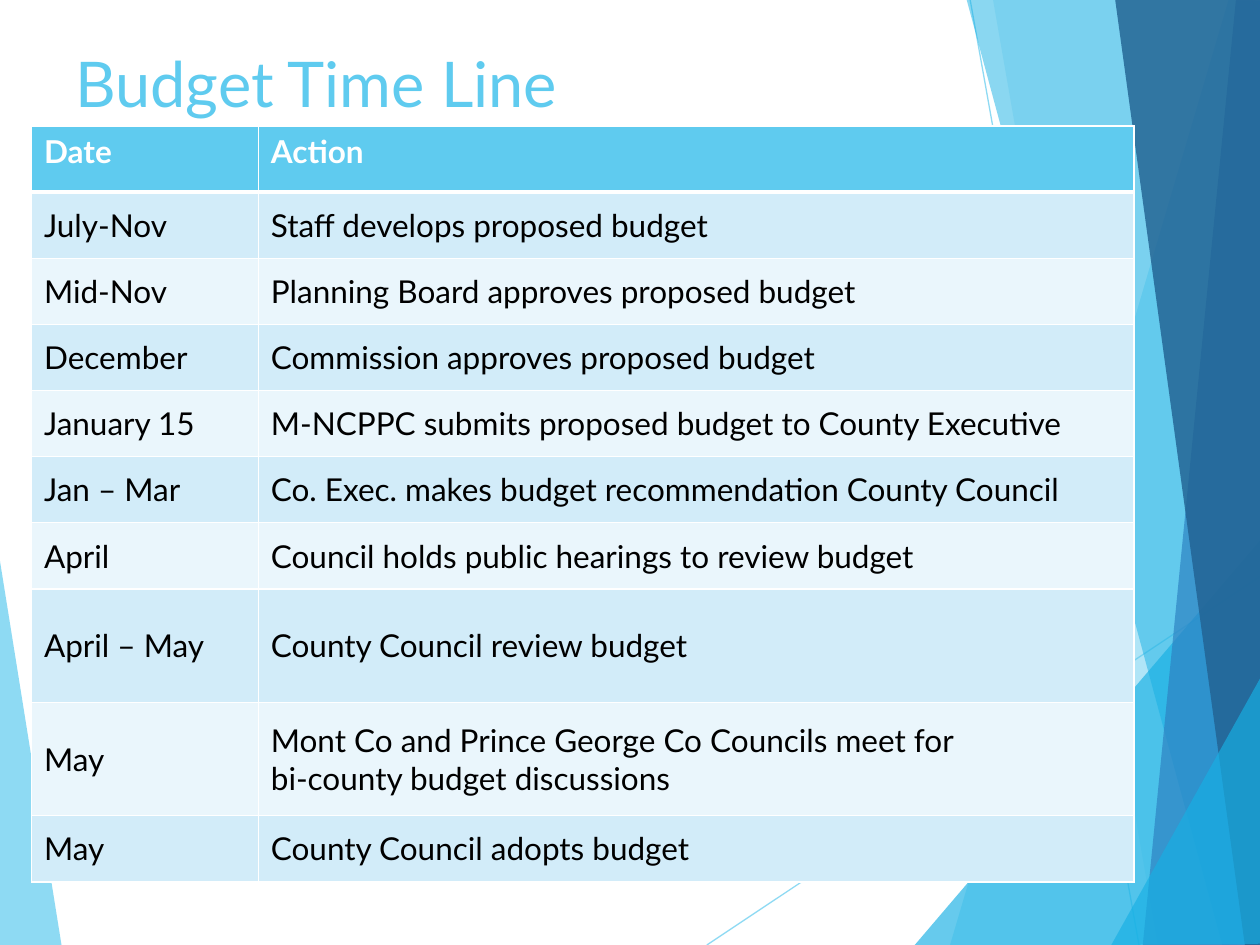
from lxml import etree
from pptx import Presentation
from pptx.dml.color import RGBColor
from pptx.enum.shapes import MSO_CONNECTOR
from pptx.enum.text import MSO_ANCHOR
from pptx.oxml.ns import qn
from pptx.util import Inches, Pt

STRAIGHT = MSO_CONNECTOR.STRAIGHT
TOP, MIDDLE = MSO_ANCHOR.TOP, MSO_ANCHOR.MIDDLE
FONT = "Lato"
COLORS = {
    "sky": "5FCBEF", "cyan": "17B0E4", "blue": "2E83C3", "navy": "226292",
    "band_dark": "D2ECF9", "band_light": "EAF6FC", "white": "FFFFFF", "black": "000000",
}
LINES = [((5.61, 7.5), (10.01, 4.57)), ((7.7, 0), (9.04, 7.5))]
LEFT_FACET = ("sky", 70, [(-0.01, 4.39), (0.49, 7.51), (-0.01, 7.5)])
RIGHT_FACETS = [
    ("sky", 36, [(9.75, 0), (7.54, 7.5), (10.02, 7.51), (10.01, 0.01)]),
    ("sky", 20, [(7.88, -0.01), (9.19, 7.5), (10.01, 7.5), (10.01, -0.01)]),
    ("cyan", 66, [(7.26, 7.5), (10, 4.29), (10.01, 7.5)]),
    ("cyan", 50, [(7.67, -0.01), (9.7, 7.5), (10.01, 7.49), (10.01, -0.01)]),
    ("blue", 70, [(9.81, -0.01), (9.07, 7.5), (10.01, 7.5), (10, -0.01)]),
    ("navy", 82, [(8.85, -0.01), (9.88, 7.5), (10.02, 7.5), (10, -0.01)]),
    ("cyan", 66, [(8.82, 7.5), (10.02, 5.35), (10.02, 7.49)]),
]
TIMELINE = [
    ("Date", "Action"),
    ("July-Nov", "Staff develops proposed budget"),
    ("Mid-Nov", "Planning Board approves proposed budget"),
    ("December", "Commission approves proposed budget"),
    ("January 15", "M-NCPPC submits proposed budget to County Executive"),
    ("Jan – Mar", "Co. Exec. makes budget recommendation County Council"),
    ("April", "Council holds public hearings to review budget"),
    ("April – May", "County Council review budget"),
    ("May", "Mont Co and Prince George Co Councils meet for\vbi-county budget discussions"),
    ("May", "County Council adopts budget"),
]
TALL_ROWS = (7, 8)
TALL_HEIGHT = 0.9
DATE_WIDTH = 1.8


def rgb(name):
    """Return the named colour."""
    return RGBColor.from_string(COLORS[name])


def set_text(frame, text, size=18, color="black", bold=False):
    """Write formatted text into a text frame."""
    frame.text = text
    for run in frame.paragraphs[0].runs:
        run.font.name = FONT
        run.font.size = Pt(size)
        run.font.bold = bold
        run.font.color.rgb = rgb(color)


def set_opacity(fill_owner, percent):
    """Give every solid colour below an element an opacity."""
    for color in fill_owner.iter(qn("a:srgbClr")):
        etree.SubElement(color, qn("a:alpha"), val=str(percent * 1000))


def add_facet(slide, box, color, opacity, points):
    """Draw one translucent polygon, offset by the box."""
    corners = [(Inches(box[0] + x), Inches(box[1] + y)) for x, y in points]
    builder = slide.shapes.build_freeform(*corners[0])
    builder.add_line_segments(corners[1:], close=True)
    shape = builder.convert_to_shape()
    shape.shadow.inherit = False
    shape.fill.solid()
    shape.fill.fore_color.rgb = rgb(color)
    shape.line.fill.background()
    set_opacity(shape._element.spPr, opacity)


def add_thin_line(slide, box, start, end):
    """Draw one translucent thin line, offset by the box."""
    ends = [Inches(box[i] + point[i]) for point in (start, end) for i in (0, 1)]
    connector = slide.shapes.add_connector(STRAIGHT, *ends)
    connector.line.color.rgb = rgb("sky")
    connector.line.width = Pt(0.75)
    properties = connector._element.spPr
    set_opacity(properties, 70)
    etree.SubElement(properties, qn("a:effectLst"))


def add_backdrop(slide, box):
    """Place the facets and thin lines behind the content."""
    add_facet(slide, box, *LEFT_FACET)
    for start, end in LINES:
        add_thin_line(slide, box, start, end)
    for facet in RIGHT_FACETS:
        add_facet(slide, box, *facet)


def add_title(slide, box, text):
    """Place the slide title in the box."""
    shape = slide.shapes.add_textbox(*map(Inches, box))
    shape.text_frame.word_wrap = True
    shape.text_frame.vertical_anchor = TOP
    set_text(shape.text_frame, text, size=36, color="sky")


def set_borders(cell, **widths):
    """Draw white borders of the given point widths around a cell."""
    properties = cell._tc.get_or_add_tcPr()
    for side in "LRTB":
        width = str(Pt(widths.get(side, 1)))
        border = etree.SubElement(properties, qn(f"a:ln{side}"), w=width)
        fill = etree.SubElement(border, qn("a:solidFill"))
        etree.SubElement(fill, qn("a:srgbClr"), val=COLORS["white"])


def add_timeline(slide, box, rows):
    """Place the table of dates and actions in the box."""
    table = slide.shapes.add_table(len(rows), 2, *map(Inches, box)).table
    table.columns[0].width = Inches(DATE_WIDTH)
    table.columns[1].width = Inches(box[2] - DATE_WIDTH)
    normal_height = (box[3] - len(TALL_ROWS) * TALL_HEIGHT) / (len(rows) - len(TALL_ROWS))
    for i, texts in enumerate(rows):
        header = i == 0
        table.rows[i].height = Inches(TALL_HEIGHT if i in TALL_ROWS else normal_height)
        band = "sky" if header else ("band_light", "band_dark")[i % 2]
        for j, text in enumerate(texts):
            cell = table.cell(i, j)
            set_borders(cell, T=3 if i == 1 else 1, B=3 if header else 1)
            cell.fill.solid()
            cell.fill.fore_color.rgb = rgb(band)
            cell.vertical_anchor = TOP if header else MIDDLE
            set_text(cell.text_frame, text, color="white" if header else "black", bold=header)


def main():
    """Build and save the slide."""
    presentation = Presentation()
    presentation.slide_width, presentation.slide_height = Inches(10), Inches(7.5)
    slide = presentation.slides.add_slide(presentation.slide_layouts[6])
    add_backdrop(slide, (0, 0))
    add_title(slide, (0.5, 0.3, 9, 1.25), "Budget Time Line")
    add_timeline(slide, (0.25, 1, 8.75, 6), TIMELINE)
    presentation.save("out.pptx")


if __name__ == "__main__":
    main()
